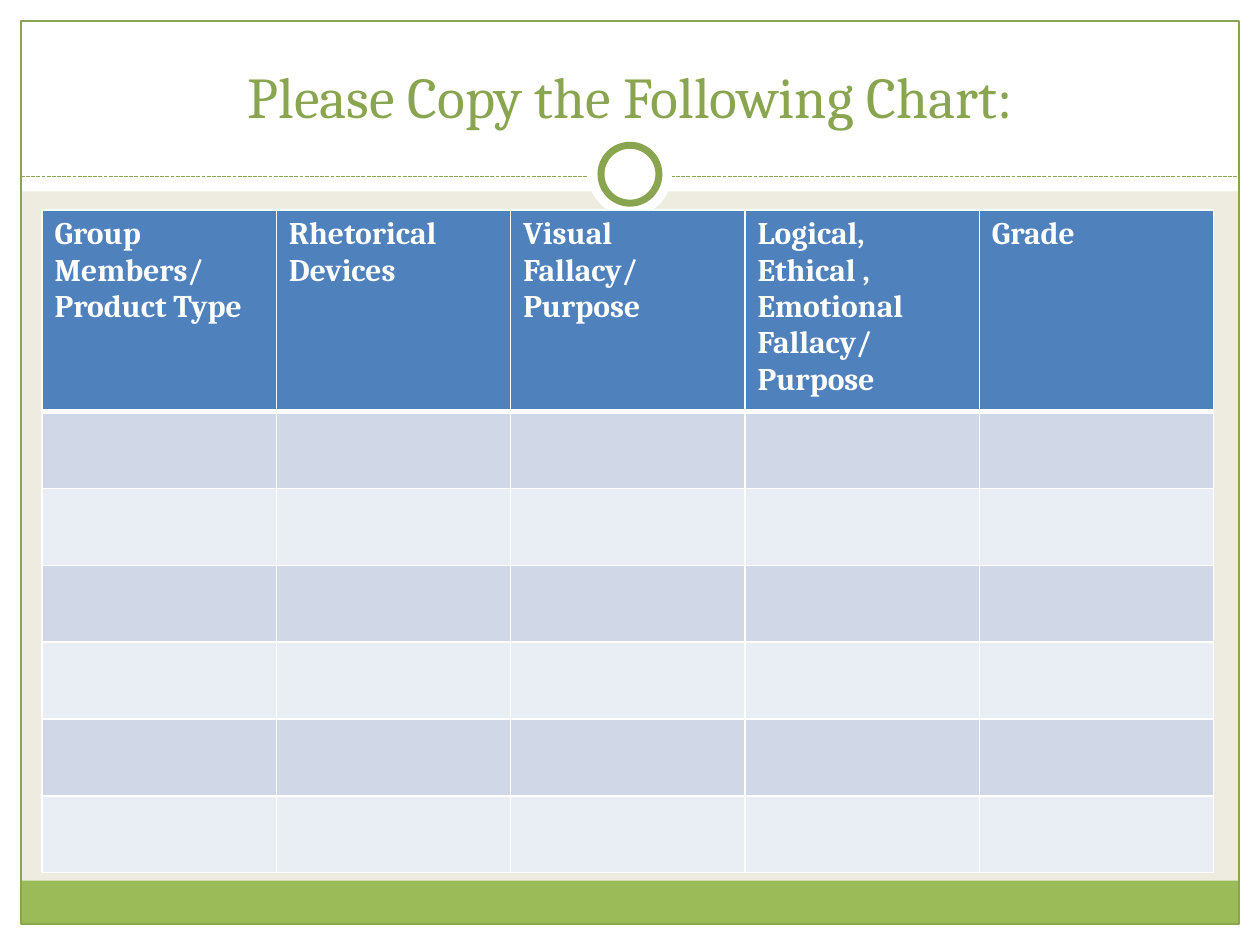
from lxml import etree
from pptx import Presentation
from pptx import util as u
from pptx.dml.color import RGBColor
from pptx.enum import dml, shapes, text
from pptx.oxml.ns import qn

COLORS = {
    "paper": "EEECE1", "white": "FFFFFF", "band": "9BBB59", "accent": "89A54F",
    "header": "4F81BD", "odd": "D0D8E8", "even": "E9EDF4",
}
HEADINGS = [
    ["Group Members/", "Product Type"],
    ["Rhetorical Devices"],
    ["Visual Fallacy/", "Purpose"],
    ["Logical, Ethical , Emotional Fallacy/", "Purpose"],
    ["Grade"],
]
EMPTY_ROWS = 6


def color(name):
    return RGBColor.from_string(COLORS[name])


def write(frame, lines, size, tint, bold=False, align=text.PP_ALIGN.LEFT):
    for i, line in enumerate(lines):
        paragraph = frame.paragraphs[0] if i == 0 else frame.add_paragraph()
        paragraph.alignment = align
        run = paragraph.add_run()
        run.text = line
        run.font.name = "Cambria"
        run.font.size = u.Pt(size)
        run.font.bold = bold
        run.font.color.rgb = color(tint)


class Page:
    """A slide on a grid of 60 columns and 45 rows, each a sixth of an inch."""
    columns, rows = 60, 45

    def __init__(self, deck):
        self.slide = deck.slides.add_slide(deck.slide_layouts[6])
        self.unit = deck.slide_width / self.columns
        self.slide.background.fill.solid()
        self.slide.background.fill.fore_color.rgb = color("paper")

    def grid(self, *lengths):
        return [u.Emu(round(n * self.unit)) for n in lengths]

    def shape(self, kind, box, fill=None, line=None, weight=0.75):
        item = self.slide.shapes.add_shape(kind, *self.grid(*box))
        item.shadow.inherit = False
        if fill:
            item.fill.solid()
            item.fill.fore_color.rgb = color(fill)
        else:
            item.fill.background()
        if line:
            item.line.color.rgb = color(line)
            item.line.width = u.Pt(weight)
        else:
            item.line.fill.background()

    def rect(self, *box, **style):
        self.shape(shapes.MSO_SHAPE.RECTANGLE, box, **style)

    def circle(self, x, y, diameter, **style):
        box = (x - diameter / 2, y - diameter / 2, diameter, diameter)
        self.shape(shapes.MSO_SHAPE.OVAL, box, **style)

    def dashed_rule(self, x1, x2, y):
        rule = self.slide.shapes.add_connector(
            shapes.MSO_CONNECTOR.STRAIGHT, *self.grid(x1, y, x2, y))
        rule.line.color.rgb = color("accent")
        rule.line.width = u.Pt(0.75)
        rule.line.dash_style = dml.MSO_LINE.SQUARE_DOT
        etree.SubElement(rule._element.spPr, qn("a:effectLst"))

    def title(self, words, *box):
        frame = self.slide.shapes.add_textbox(*self.grid(*box)).text_frame
        frame.word_wrap = True
        frame.vertical_anchor = text.MSO_ANCHOR.BOTTOM
        write(frame, [words], 33, "accent", align=text.PP_ALIGN.CENTER)

    def borders(self, cell, **weights):
        properties = cell._tc.get_or_add_tcPr()
        for side, weight in weights.items():
            line = etree.SubElement(properties, qn(f"a:ln{side}"), w=str(u.Pt(weight)))
            fill = etree.SubElement(line, qn("a:solidFill"))
            etree.SubElement(fill, qn("a:srgbClr"), val=COLORS["white"])

    def table(self, headings, empty_rows, x, y, width, header_height, row_height):
        height = header_height + empty_rows * row_height
        table = self.slide.shapes.add_table(
            empty_rows + 1, len(headings), *self.grid(x, y, width, height)).table
        for column in table.columns:
            column.width = self.grid(width / len(headings))[0]
        for r, row in enumerate(table.rows):
            row.height = self.grid(row_height if r else header_height)[0]
            tint = "header" if r == 0 else "odd" if r % 2 else "even"
            for cell in row.cells:
                # The rule under the header is heavier and shared with row 1
                self.borders(cell, L=1, R=1, T=3 if r == 1 else 1, B=1 if r else 3)
                cell.fill.solid()
                cell.fill.fore_color.rgb = color(tint)
        for cell, lines in zip(table.rows[0].cells, headings):
            write(cell.text_frame, lines, 18, "white", bold=True)


def main():
    deck = Presentation()
    deck.slide_width, deck.slide_height = u.Inches(10), u.Inches(7.5)
    page = Page(deck)

    # White margins and title area
    page.rect(0, 44, 60, 1, fill="white")
    page.rect(0, 0, 60, 9.12, fill="white")
    for left in (0, 59):
        page.rect(left, 0, 1, 45, fill="white")

    # Footer band, frame and divider with its ring
    page.rect(1, 41.94, 58, 2.06, fill="band")
    page.rect(1, 1, 58, 43, line="accent")
    page.dashed_rule(1, 59, 8.4)
    page.circle(30, 8.3, 4, fill="white")
    page.circle(30, 8.3, 2.76, fill="white", line="accent", weight=4)

    # Title and chart to copy
    page.title("Please Copy the Following Chart:", 2, 1.5, 56, 5)
    page.table(HEADINGS, EMPTY_ROWS, 2, 10, 55.8, header_height=9.06, row_height=3.66)

    deck.save("out.pptx")


if __name__ == "__main__":
    main()
